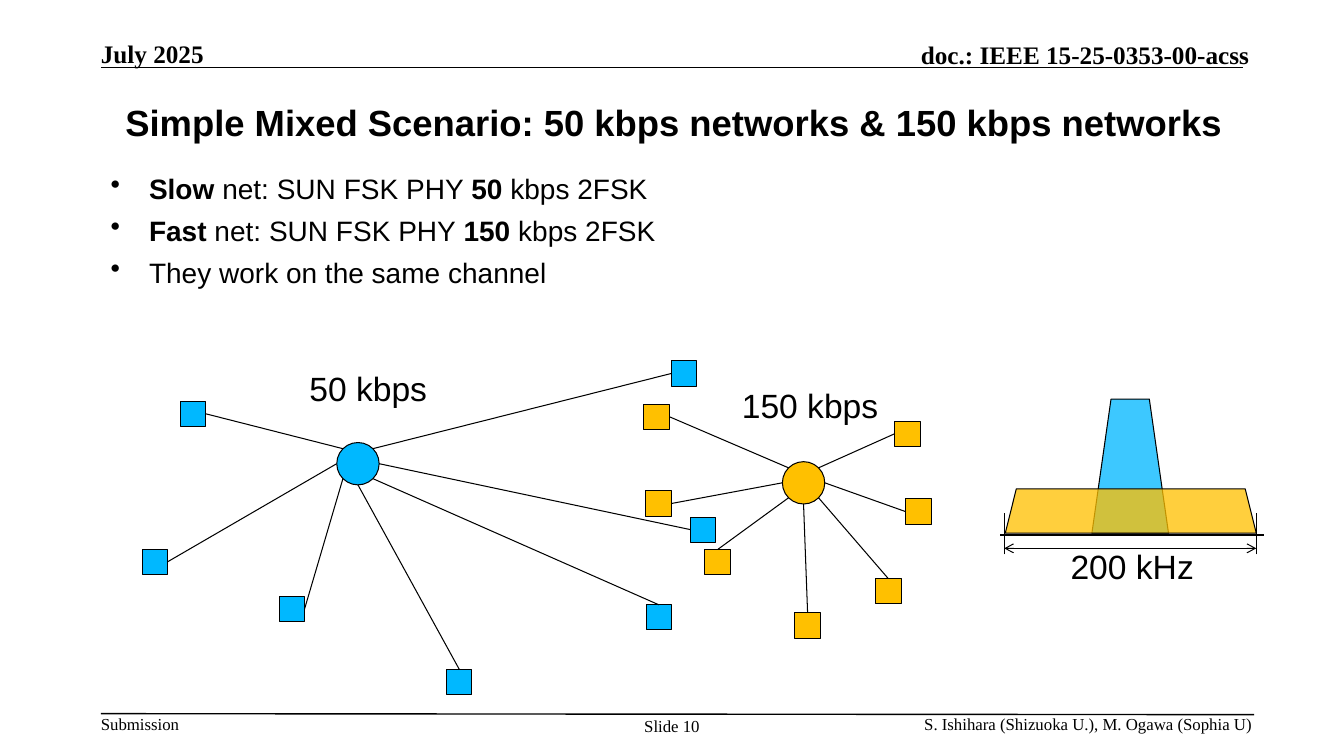
from dataclasses import dataclass
from math import cos, radians, sin

from lxml import etree
from pptx import Presentation
from pptx.dml.color import RGBColor
from pptx.enum.shapes import MSO_CONNECTOR, MSO_SHAPE
from pptx.enum.text import MSO_ANCHOR, PP_ALIGN
from pptx.oxml.ns import qn
from pptx.util import Inches, Pt

LINE = MSO_CONNECTOR.STRAIGHT
RECT, OVAL, TRAP = MSO_SHAPE.RECTANGLE, MSO_SHAPE.OVAL, MSO_SHAPE.TRAPEZOID
LEFT, MID, RIGHT = PP_ALIGN.LEFT, PP_ALIGN.CENTER, PP_ALIGN.RIGHT
CENTER = MSO_ANCHOR.MIDDLE
TOP, WEST, EAST = 0, 1, 3


@dataclass(frozen=True)
class Theme:
    """Colours, fonts and point sizes of the slide."""

    ink: RGBColor = RGBColor(0x00, 0x00, 0x00)
    slow: RGBColor = RGBColor(0x00, 0xB8, 0xFF)
    fast: RGBColor = RGBColor(0xFF, 0xC0, 0x00)
    sans: str = "Arial"
    serif: str = "Times New Roman"
    title: int = 26
    label: int = 24
    body: int = 20
    head: int = 18
    foot: int = 12
    thin: float = 0.75
    rule: float = 1
    base: float = 1.25
    alpha: int = 76


THEME = Theme()

SLOW_NODES = [
    (1.79, 3.98, EAST), (1.41, 5.45, EAST), (2.77, 5.92, EAST),
    (4.43, 6.64, TOP), (6.41, 6, TOP), (6.85, 5.13, WEST), (6.66, 3.58, WEST),
]
FAST_NODES = [
    (6.38, 4.01, EAST), (6.4, 4.87, EAST), (6.99, 5.45, TOP),
    (7.88, 6.08, TOP), (8.68, 5.74, TOP), (8.98, 4.95, WEST), (8.87, 4.18, WEST),
]
POINTS = [
    [("Slow", True), (" net: SUN FSK PHY ", False), ("50", True), (" kbps 2FSK", False)],
    [("Fast", True), (" net: SUN FSK PHY ", False), ("150", True), (" kbps 2FSK", False)],
    [("They work on the same channel", False)],
]


def add_frame(slide, box, pad=True, wrap=True):
    """Add an empty text box and return its text frame."""
    frame = slide.shapes.add_textbox(*map(Inches, box)).text_frame
    frame.word_wrap = wrap
    side, edge = (0.1, 0.05) if pad else (0, 0)
    frame.margin_left = frame.margin_right = Inches(side)
    frame.margin_top = frame.margin_bottom = Inches(edge)
    return frame


def set_font(para, size, face, bold=None):
    """Set the font that the whole paragraph shares."""
    font = para.font
    font.size, font.name, font.bold = Pt(size), face, bold
    font.color.rgb = THEME.ink


def add_text(slide, text, box, size, face, align=LEFT, bold=False, **opts):
    """Add one line of text and return its frame."""
    frame = add_frame(slide, box, **opts)
    para = frame.paragraphs[0]
    para.text, para.alignment = text, align
    set_font(para, size, face, bold)
    return frame


def add_list(slide, box):
    """Add the bulleted points with their bold words."""
    frame = add_frame(slide, box)
    for row, parts in enumerate(POINTS):
        para = frame.add_paragraph() if row else frame.paragraphs[0]
        para.space_before = Pt(6)
        props = para._p.get_or_add_pPr()
        props.set("marL", str(Inches(0.38)))
        props.set("indent", str(Inches(-0.38)))
        etree.SubElement(props, qn("a:buChar"), char="•")
        set_font(para, THEME.body, THEME.sans)
        for text, bold in parts:
            run = para.add_run()
            run.text, run.font.bold = text, bold


def add_form(slide, kind, box, color, alpha=None):
    """Add an outlined shape, see-through when alpha is given."""
    form = slide.shapes.add_shape(kind, *map(Inches, box))
    form.shadow.inherit = False
    form.fill.solid()
    form.fill.fore_color.rgb = color
    form.line.color.rgb = THEME.ink
    form.line.width = Pt(THEME.thin)
    if alpha:
        tint = form._element.spPr.find(qn("a:solidFill"))[0]
        etree.SubElement(tint, qn("a:alpha"), val=str(alpha * 1000))
    return form


def add_line(slide, start, end, width=THEME.thin, arrows=False):
    """Add a straight line, with arrowheads at both ends on request."""
    line = slide.shapes.add_connector(LINE, *map(Inches, start + end))
    line.line.color.rgb = THEME.ink
    line.line.width = Pt(width)
    props = line._element.spPr
    if arrows:
        for tag in ("a:headEnd", "a:tailEnd"):
            etree.SubElement(props.find(qn("a:ln")), qn(tag), type="arrow")
    etree.SubElement(props, qn("a:effectLst"))
    return line


def add_net(slide, hub, nodes, wide, color):
    """Add a hub and its nodes, linked at steps of 45 degrees round the hub."""
    size = 0.42
    left, top = hub
    rad = size / 2
    add_form(slide, OVAL, (left, top, size, size), color)
    for step, (x, y, side) in enumerate(nodes, 1):
        node = add_form(slide, RECT, (x, y, wide, 0.25), color)
        turn = radians(90 + 45 * step)
        rim = (left + rad + rad * cos(turn), top + rad - rad * sin(turn))
        link = add_line(slide, (x, y), rim)
        link.begin_connect(node, side)


def add_band(slide):
    """Add the two spectra over the channel and its width mark."""
    add_form(slide, TRAP, (10.83, 3.96, 0.76, 1.33), THEME.slow, THEME.alpha)
    add_form(slide, TRAP, (9.97, 4.85, 2.49, 0.44), THEME.fast, THEME.alpha)
    add_line(slide, (9.92, 5.31), (12.54, 5.31), THEME.base)
    for x in (9.96, 12.46):
        add_line(slide, (x, 5.5), (x, 5.09))
    add_line(slide, (9.96, 5.44), (12.46, 5.44), arrows=True)
    add_text(slide, "200 kHz", (10.51, 5.37, 1.44, 0.5), THEME.label, THEME.sans, MID)


def add_edges(slide):
    """Add the header and footer with their rules."""
    add_line(slide, (1, 0.67), (12.33, 0.67), THEME.rule)
    add_line(slide, (1, 7.08), (12.44, 7.09), THEME.rule)
    head, foot = (THEME.head, True), (THEME.foot, False)
    for text, box, align, (size, bold) in (
        ("July 2025", (1, 0.38, 1.75, 0.3), LEFT, head),
        ("doc.: IEEE 15-25-0353-00-acss", (7.29, 0.39, 5.1, 0.3), RIGHT, head),
        ("Submission", (1, 7.08, 2, 0.2), LEFT, foot),
        ("Slide 10", (6.28, 7.1, 0.77, 0.4), MID, foot),
        ("S. Ishihara (Shizuoka U.), M. Ogawa (Sophia U)",
         (8.42, 7.08, 4, 0.2), RIGHT, foot),
    ):
        add_text(slide, text, box, size, THEME.serif, align, bold, pad=False)


def main():
    """Build the slide and save it."""
    deck = Presentation()
    deck.slide_width, deck.slide_height = Inches(13.33), Inches(7.5)
    slide = deck.slides.add_slide(deck.slide_layouts[6])
    add_edges(slide)
    title = add_text(
        slide, "Simple Mixed Scenario: 50 kbps networks & 150 kbps networks",
        (0.92, 0.71, 11.54, 1), THEME.title, THEME.sans, MID, True)
    title.vertical_anchor = CENTER
    add_list(slide, (1, 1.65, 11.33, 1.25))
    add_net(slide, (3.34, 4.39), SLOW_NODES, 0.25, THEME.slow)
    add_net(slide, (7.76, 4.58), FAST_NODES, 0.26, THEME.fast)
    for text, box in (
        ("50 kbps", (2.97, 3.6, 1.38, 0.5)),
        ("150 kbps", (7.26, 3.77, 1.57, 0.5)),
    ):
        add_text(slide, text, box, THEME.label, THEME.sans, wrap=False)
    add_band(slide)
    deck.save("out.pptx")


if __name__ == "__main__":
    main()
